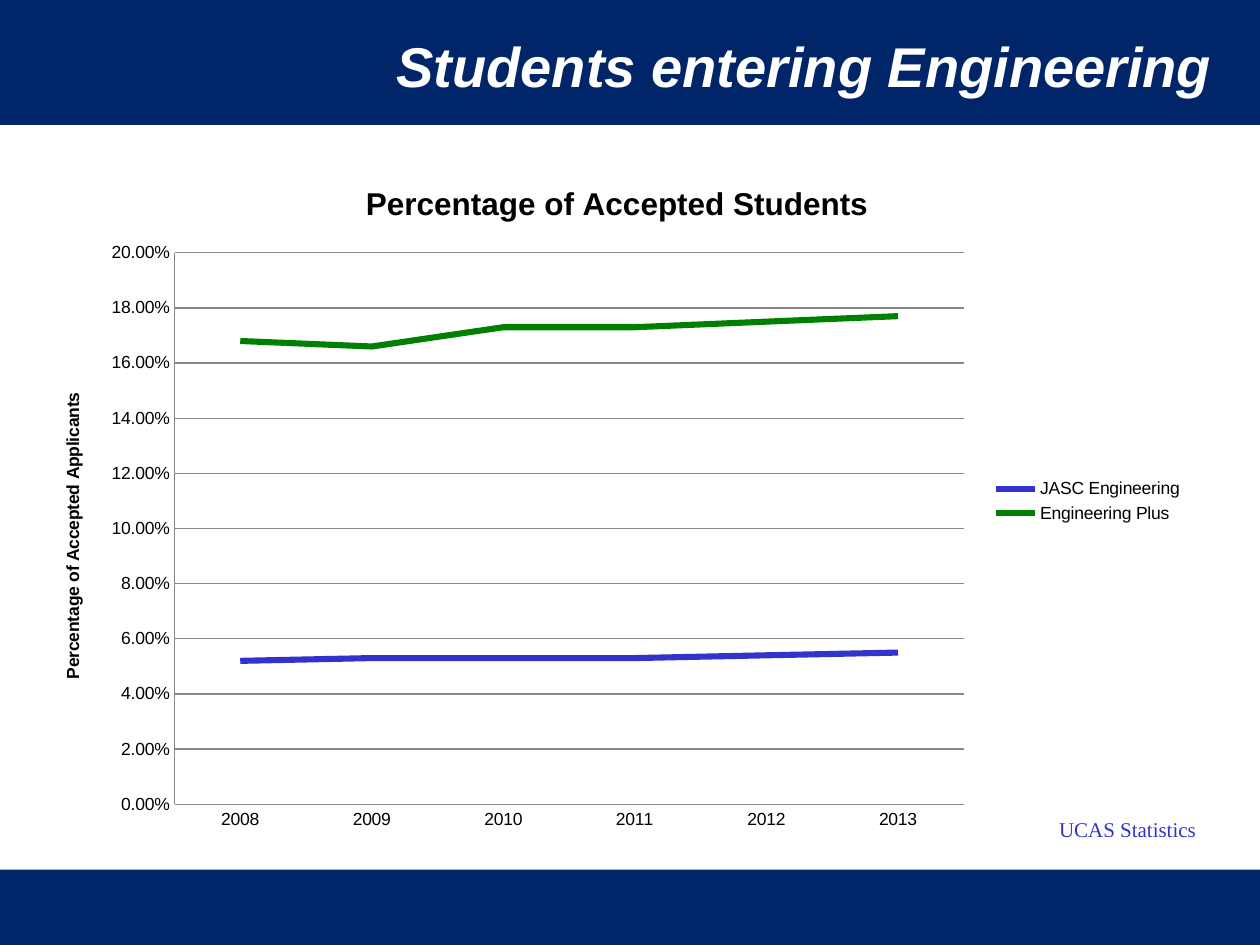
from dataclasses import dataclass

from lxml.etree import SubElement
from pptx import Presentation
from pptx.chart.data import CategoryChartData
from pptx.dml.color import RGBColor
from pptx.enum.chart import XL_CHART_TYPE, XL_LEGEND_POSITION, XL_MARKER_STYLE, XL_TICK_MARK
from pptx.enum.shapes import MSO_SHAPE
from pptx.enum.text import MSO_ANCHOR, MSO_AUTO_SIZE, PP_ALIGN
from pptx.oxml.ns import qn
from pptx.util import Cm, Pt


@dataclass(frozen=True)
class Theme:
    navy: RGBColor = RGBColor(0x00, 0x25, 0x69)
    white: RGBColor = RGBColor(0xFF, 0xFF, 0xFF)
    black: RGBColor = RGBColor(0x00, 0x00, 0x00)
    grey: RGBColor = RGBColor(0x87, 0x87, 0x87)
    blue: RGBColor = RGBColor(0x33, 0x33, 0xCC)
    green: RGBColor = RGBColor(0x00, 0x80, 0x00)
    sans: str = "Arial"
    serif: str = "Times New Roman"
    title_size: Pt = Pt(32)
    chart_title_size: Pt = Pt(18)
    chart_size: Pt = Pt(10)
    source_size: Pt = Pt(12)
    axis_width: Pt = Pt(0.75)
    series_width: Pt = Pt(3.5)


THEME = Theme()
YEARS = ["2008", "2009", "2010", "2011", "2012", "2013"]
SERIES = [
    ("JASC Engineering", [0.052, 0.053, 0.053, 0.053, 0.054, 0.055], THEME.blue),
    ("Engineering Plus", [0.168, 0.166, 0.173, 0.173, 0.175, 0.177], THEME.green),
]


def set_font(font, name, size, color, bold=False, italic=False):
    font.name, font.size, font.bold, font.italic = name, size, bold, italic
    font.color.rgb = color


def add_band(page, left, top, width, height):
    """Add a navy band behind the title placeholder."""
    band = page.shapes.add_shape(MSO_SHAPE.RECTANGLE, left, top, width, height)
    band.shadow.inherit = False
    band.fill.solid()
    band.fill.fore_color.rgb = THEME.navy
    band.line.fill.background()
    page.shapes.title.element.addprevious(band.element)


def place_title(page, left, top, width, height):
    title = page.shapes.title
    title.left, title.top, title.width, title.height = left, top, width, height
    frame = title.text_frame
    frame.text = "Students entering Engineering"
    frame.word_wrap = True
    frame.auto_size = MSO_AUTO_SIZE.NONE
    frame.vertical_anchor = MSO_ANCHOR.MIDDLE
    para = frame.paragraphs[0]
    para.alignment = PP_ALIGN.RIGHT
    set_font(para.font, THEME.sans, THEME.title_size, THEME.white, bold=True, italic=True)


def set_layout(parent, index, **fractions):
    """Fix a chart part at fractions of the chart area."""
    for old in parent.findall(qn("c:layout")):
        parent.remove(old)
    layout = SubElement(parent, qn("c:layout"))
    parent.insert(index, layout)
    manual = SubElement(layout, qn("c:manualLayout"))
    if "w" in fractions:
        SubElement(manual, qn("c:layoutTarget")).set("val", "inner")
    for side in ("x", "y"):
        SubElement(manual, qn(f"c:{side}Mode")).set("val", "edge")
    for side, fraction in fractions.items():
        SubElement(manual, qn(f"c:{side}")).set("val", str(fraction))


def write_chart_title(title, text, size):
    title.text_frame.text = text
    set_font(title.text_frame.paragraphs[0].font, THEME.sans, size, THEME.black, bold=True)


def style_line(line, color, width):
    line.color.rgb = color
    line.width = width


def style_axes(chart):
    value_axis = chart.value_axis
    value_axis.minimum_scale, value_axis.maximum_scale = 0, 0.2
    value_axis.major_unit = 0.02
    value_axis.tick_labels.number_format = "0.00%"
    value_axis.tick_labels.number_format_is_linked = False
    style_line(value_axis.major_gridlines.format.line, THEME.grey, THEME.axis_width)
    write_chart_title(value_axis.axis_title, "Percentage of Accepted Applicants", THEME.chart_size)
    for axis in (value_axis, chart.category_axis):
        axis.major_tick_mark = axis.minor_tick_mark = XL_TICK_MARK.NONE
        style_line(axis.format.line, THEME.grey, THEME.axis_width)


def add_line_chart(page, left, top, width, height):
    chart_data = CategoryChartData(number_format="0.00%")
    chart_data.categories = YEARS
    for name, values, _ in SERIES:
        chart_data.add_series(name, values)
    chart = page.shapes.add_chart(
        XL_CHART_TYPE.LINE, left, top, width, height, chart_data).chart
    set_font(chart.font, THEME.sans, THEME.chart_size, THEME.black)
    write_chart_title(chart.chart_title, "Percentage of Accepted Students", THEME.chart_title_size)
    chart.chart_title.include_in_layout = False
    chart.has_legend = True
    chart.legend.position = XL_LEGEND_POSITION.RIGHT
    chart.legend.include_in_layout = False
    style_axes(chart)

    plot = chart.plots[0]
    plot.vary_by_categories = False
    for series, (_, _, color) in zip(plot.series, SERIES):
        series.smooth = False
        series.marker.style = XL_MARKER_STYLE.NONE
        style_line(series.format.line, color, THEME.series_width)

    root = chart.element
    set_layout(root.find(qn("c:chart")).find(qn("c:title")), 1, x=0.28, y=0.03)
    set_layout(next(root.iter(qn("c:plotArea"))), 0, x=0.12, y=0.14, w=0.68, h=0.8)


def add_source(page, left, top, width, height):
    box = page.shapes.add_textbox(left, top, width, height)
    frame = box.text_frame
    frame.word_wrap = False
    frame.auto_size = MSO_AUTO_SIZE.SHAPE_TO_FIT_TEXT
    frame.text = "UCAS Statistics"
    set_font(frame.paragraphs[0].font, THEME.serif, THEME.source_size, THEME.blue)


def main():
    deck = Presentation()
    deck.slide_width, deck.slide_height = Cm(25.4), Cm(19.05)
    page = deck.slides.add_slide(deck.slide_layouts.get_by_name("Title Only"))
    add_band(page, 0, Cm(17.53), deck.slide_width, Cm(1.52))
    add_band(page, 0, 0, deck.slide_width, Cm(2.52))
    place_title(page, Cm(7.5), Cm(-0.18), Cm(17.2), Cm(2.97))
    add_line_chart(page, Cm(0.71), Cm(3.15), Cm(23.4), Cm(13.9))
    add_source(page, Cm(21.1), Cm(16.33), Cm(3.3), Cm(0.76))
    deck.save("out.pptx")


if __name__ == "__main__":
    main()
